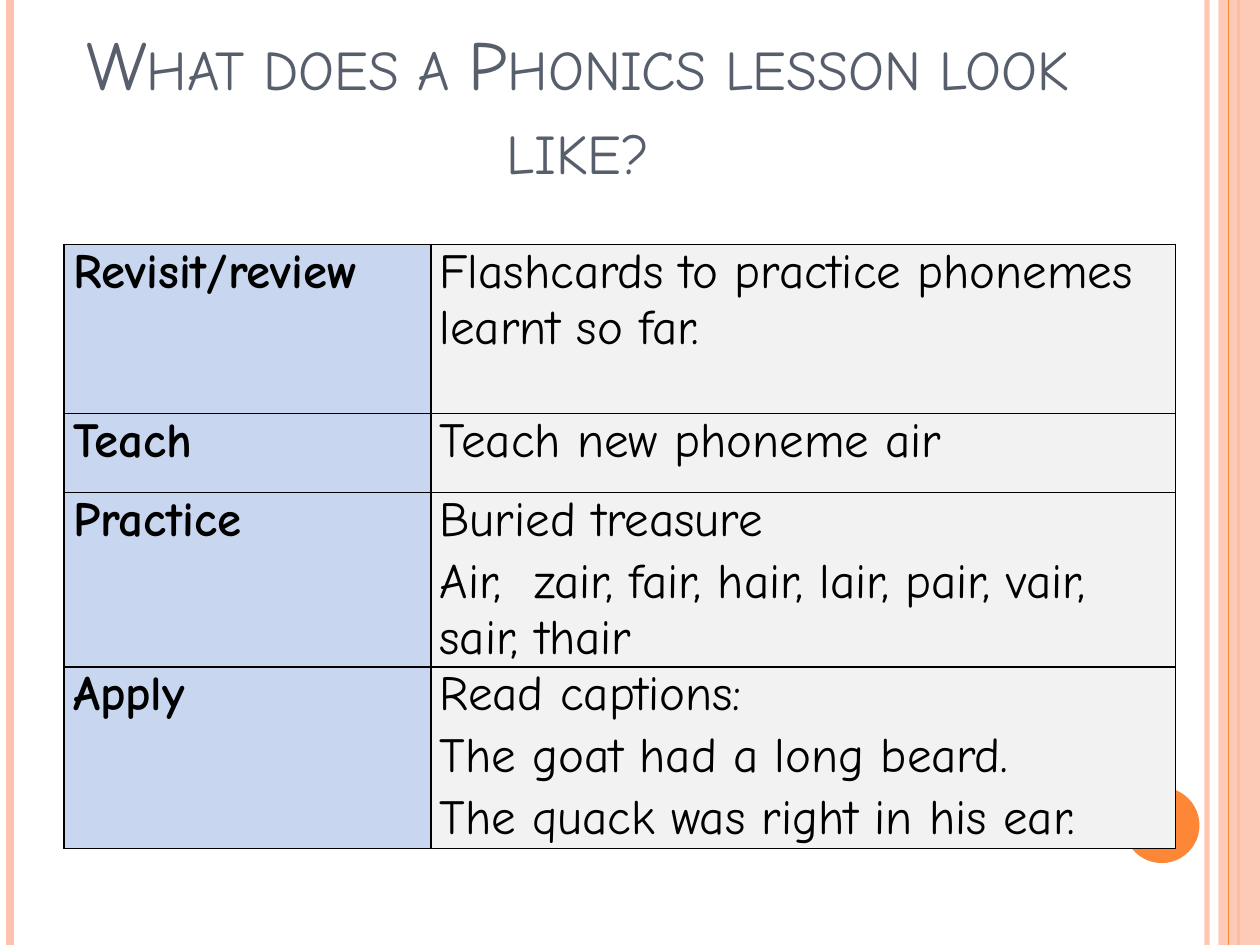
from dataclasses import dataclass

from lxml import etree
from pptx import Presentation
from pptx.dml.color import RGBColor
from pptx.enum import shapes, text
from pptx.oxml import ns
from pptx.util import Inches, Pt


@dataclass(frozen=True)
class Theme:
    font: str = "Comic Neue"
    title_size: int = 40
    body_size: int = 28
    title: str = "575F6D"
    ink: str = "000000"
    orange: str = "FE8637"
    peach: str = "FEC3AE"
    label_fill: str = "C8D6F0"
    detail_fill: str = "F2F2F2"


@dataclass(frozen=True)
class Stripe:
    x: float
    color: str
    width: float
    opacity: int = 100


@dataclass(frozen=True)
class Stage:
    label: str
    details: tuple[str, ...]
    height: float


THEME = Theme()
PAGE_W, PAGE_H = 10, 7.5

STRIPES_BELOW = (
    Stripe(9.58, THEME.peach, 3, 93),
    Stripe(0.08, THEME.peach, 4.5),
    Stripe(9.83, THEME.orange, 1.5),
)
STRIPE_ABOVE = Stripe(9.75, THEME.orange, 0.75)

COLUMNS = (2.91, 5.91)
STAGES = (
    Stage("Revisit/review", ("Flashcards to practice phonemes learnt so far.",), 1.34),
    Stage("Teach", ("Teach new phoneme air",), 0.63),
    Stage(
        "Practice",
        ("Buried treasure", "Air,  zair, fair, hair, lair, pair, vair, sair, thair"),
        1.38,
    ),
    Stage(
        "Apply",
        ("Read captions:", "The goat had a long beard.", "The quack was right in his ear."),
        1.44,
    ),
)


def set_opacity(element, percent: int) -> None:
    color = next(element.iter(ns.qn("a:srgbClr")))
    etree.SubElement(color, ns.qn("a:alpha"), val=str(percent * 1000))


def add_stripe(slide, stripe: Stripe) -> None:
    x = Inches(stripe.x)
    line = slide.shapes.add_connector(
        shapes.MSO_CONNECTOR.STRAIGHT, x, 0, x, Inches(PAGE_H)
    )
    line.line.color.rgb = RGBColor.from_string(stripe.color)
    line.line.width = Pt(stripe.width)
    props = line._element.spPr
    if stripe.opacity < 100:
        set_opacity(props, stripe.opacity)
    etree.SubElement(props, ns.qn("a:effectLst"))


def add_plain_shape(slide, kind, box: tuple[float, ...], color: str, opacity: int = 100) -> None:
    sp = slide.shapes.add_shape(kind, *map(Inches, box))
    sp.shadow.inherit = False
    sp.fill.solid()
    sp.fill.fore_color.rgb = RGBColor.from_string(color)
    sp.line.fill.background()
    if opacity < 100:
        set_opacity(sp._element.spPr, opacity)


def style_font(font, size: int, color: str, bold: bool = False) -> None:
    font.name = THEME.font
    font.size = Pt(size)
    font.bold = bold
    font.color.rgb = RGBColor.from_string(color)


def format_title(slide) -> None:
    title = slide.shapes.title
    title.left, title.top, title.width, title.height = map(Inches, (0.5, 0.3, 8.17, 1.25))
    tf = title.text_frame
    tf.text = "What does a Phonics lesson look like?"
    tf.word_wrap = True
    tf.auto_size = text.MSO_AUTO_SIZE.NONE
    tf.vertical_anchor = text.MSO_ANCHOR.BOTTOM
    p = tf.paragraphs[0]
    p.alignment = text.PP_ALIGN.CENTER
    style_font(p.font, THEME.title_size, THEME.title)
    p.runs[0].font._element.set("cap", "small")


def add_borders(cell) -> None:
    props = cell._tc.get_or_add_tcPr()
    for index, side in enumerate(("lnL", "lnR", "lnT", "lnB")):
        border = etree.Element(ns.qn(f"a:{side}"), w=str(Pt(1)))
        fill = etree.SubElement(border, ns.qn("a:solidFill"))
        etree.SubElement(fill, ns.qn("a:srgbClr"), val=THEME.ink)
        props.insert(index, border)


def fill_cell(cell, lines: tuple[str, ...], color: str, bold: bool) -> None:
    cell.margin_left = cell.margin_right = Inches(0.07)
    cell.margin_top = cell.margin_bottom = 0
    cell.fill.solid()
    cell.fill.fore_color.rgb = RGBColor.from_string(color)
    add_borders(cell)
    tf = cell.text_frame
    tf.text = "\n".join(lines)
    for p in tf.paragraphs:
        p.space_before = Pt(3)
        style_font(p.font, THEME.body_size, THEME.ink, bold)


def add_lesson_table(slide) -> None:
    height = sum(stage.height for stage in STAGES)
    frame = slide.shapes.add_table(
        len(STAGES), len(COLUMNS),
        Inches(0.51), Inches(1.94), Inches(sum(COLUMNS)), Inches(height),
    )
    table = frame.table
    table.first_row = table.horz_banding = False
    for column, width in zip(table.columns, COLUMNS):
        column.width = Inches(width)
    for row, stage in zip(table.rows, STAGES):
        row.height = Inches(stage.height)
        label, detail = row.cells
        fill_cell(label, (stage.label,), THEME.label_fill, True)
        fill_cell(detail, stage.details, THEME.detail_fill, False)


def main() -> None:
    prs = Presentation()
    prs.slide_width, prs.slide_height = Inches(PAGE_W), Inches(PAGE_H)
    slide = prs.slides.add_slide(prs.slide_layouts[5])
    for stripe in STRIPES_BELOW:
        add_stripe(slide, stripe)
    add_plain_shape(
        slide, shapes.MSO_SHAPE.RECTANGLE, (9.67, 0, 0.33, PAGE_H), THEME.peach, 87
    )
    add_stripe(slide, STRIPE_ABOVE)
    add_plain_shape(slide, shapes.MSO_SHAPE.OVAL, (8.92, 6.25, 0.6, 0.6), THEME.orange)
    format_title(slide)
    add_lesson_table(slide)
    prs.save("out.pptx")


if __name__ == "__main__":
    main()
